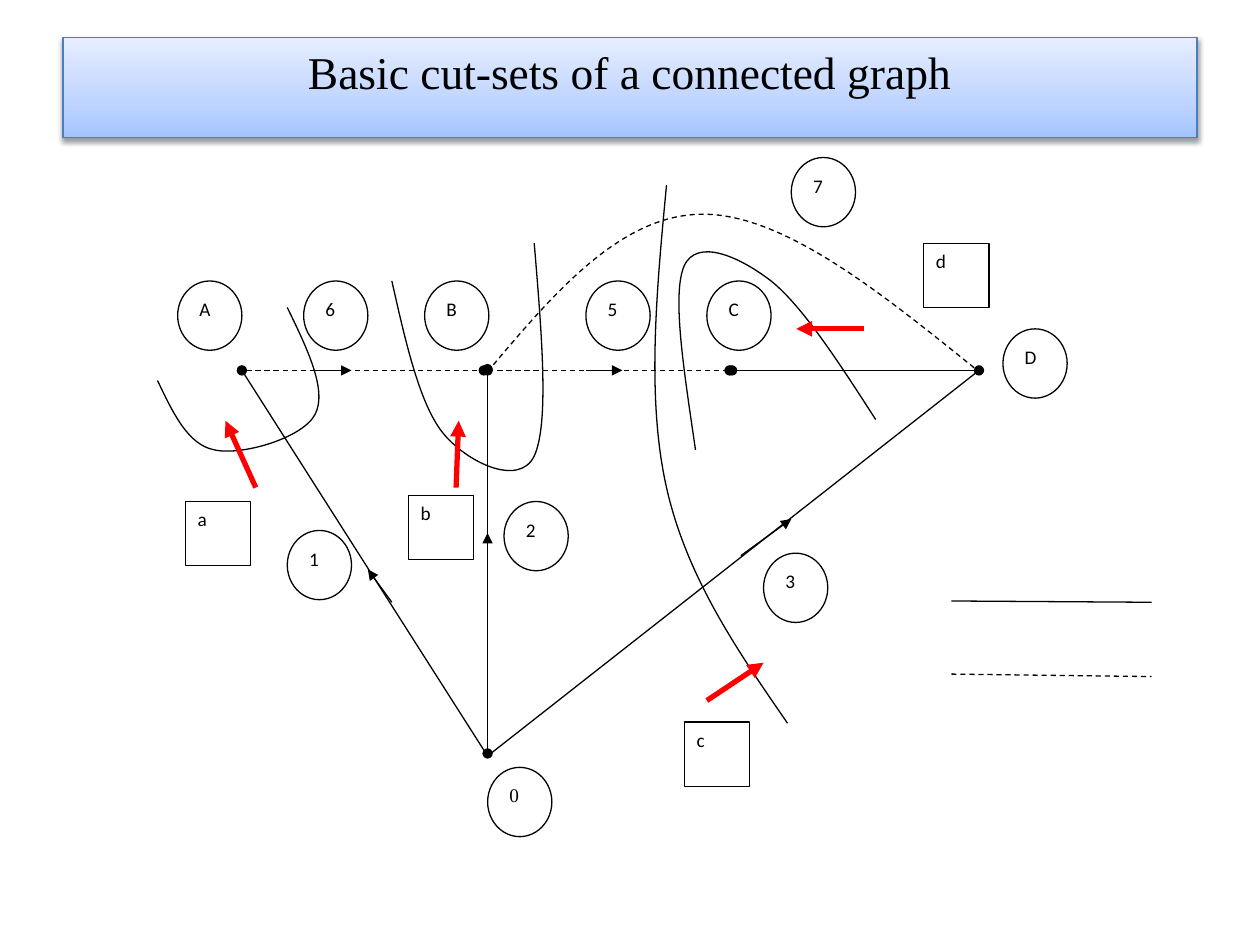
from dataclasses import dataclass
from typing import Optional

from lxml.etree import SubElement
from pptx import Presentation
from pptx.dml.color import RGBColor as Rgb
from pptx.enum.dml import MSO_LINE as Dash
from pptx.enum.shapes import MSO_CONNECTOR as Connector, MSO_SHAPE as Preset
from pptx.enum.text import MSO_ANCHOR as Anchor, MSO_AUTO_SIZE as AutoSize, PP_ALIGN as Align
from pptx.oxml import parse_xml
from pptx.oxml.ns import nsdecls, qn
from pptx.util import Inches, Pt

Point = tuple[float, float]


@dataclass(frozen=True)
class Theme:
    ink: str = "000000"
    paper: str = "FFFFFF"
    pointer: str = "FF0000"
    banner_line: str = "4B7EBC"
    banner_stops: tuple = ((0, "A4C4FF"), (35, "BFD4FF"), (100, "E6EEFF"))
    body_font: str = "Calibri"
    title_font: str = "Times New Roman"
    label_size: float = 11
    title_size: float = 26
    thin: float = 0.75
    thick: float = 3


THEME = Theme()


@dataclass(frozen=True)
class Label:
    text: str
    left: float
    top: float
    font: str = THEME.body_font


@dataclass(frozen=True)
class Edge:
    start: Point
    end: Point
    dashed: bool = False
    head: Optional[str] = None
    tail: Optional[str] = None
    color: str = THEME.ink
    width: float = THEME.thin


@dataclass(frozen=True)
class Curve:
    """Anchor and control points of joined cubic segments."""
    points: tuple[Point, ...]
    dashed: bool = False


# Circles name the vertices and branches, squares name the cut-sets
CIRCLE_SIZE, SQUARE_SIZE = (0.51, 0.55), (0.52, 0.51)
CIRCLES = [
    Label("7", 6.28, 1.25), Label("A", 1.41, 2.23), Label("5", 4.65, 2.23),
    Label("D", 7.96, 2.61), Label("3", 6.06, 4.39), Label("2", 4, 3.98),
    Label("B", 3.37, 2.23), Label("6", 2.41, 2.23), Label("1", 2.28, 4.21),
    Label("0", 3.87, 6.09, THEME.title_font), Label("C", 5.61, 2.23),
]
SQUARES = [Label("d", 7.33, 1.93), Label("c", 5.43, 5.73),
           Label("a", 1.47, 3.98), Label("b", 3.24, 3.93)]

# Vertices of the graph
A, B, D, ORIGIN = (1.92, 2.94), (3.87, 2.94), (7.77, 2.94), (3.87, 6)
DOTS = {"head": "oval", "tail": "oval"}
TRUNK = Edge((3.87, 2.93), (3.87, 5.98), **DOTS)
ROW = [
    Edge(A, B, dashed=True, **DOTS),
    Edge((3.84, 2.94), (5.79, 2.94), dashed=True, **DOTS),
    Edge((5.81, 2.94), D, **DOTS),
]
SIDES = [Edge(ORIGIN, D), Edge(A, ORIGIN)]
DIRECTIONS = [Edge(start, end, tail="triangle") for start, end in (
    ((5.88, 4.41), (6.28, 4.12)), ((3.11, 4.78), (2.92, 4.52)),
    ((3.87, 4.55), (3.87, 4.23)), ((2.5, 2.94), (2.79, 2.94)),
    ((4.65, 2.94), (4.94, 2.94)))]
LEGEND = [Edge((7.55, 4.77), (9.14, 4.78)),
          Edge((7.55, 5.35), (9.14, 5.37), dashed=True)]
POINTERS = [Edge(start, end, tail="triangle", color=THEME.pointer, width=THEME.thick)
            for start, end in (
                ((2.03, 3.87), (1.79, 3.34)), ((3.62, 3.87), (3.64, 3.34)),
                ((6.86, 2.61), (6.32, 2.61)), ((5.61, 5.56), (6.06, 5.26)))]

# Branch 7, then the lines of cut-sets a, b, c and d
BRANCH_ARC = Curve(((3.87, 2.95), (4.4, 2.32), (4.93, 1.7), (5.58, 1.7),
                    (6.22, 1.7), (6.99, 2.32), (7.77, 2.95)), dashed=True)
CUTS = [
    Curve(((1.25, 3.02), (1.37, 3.27), (1.49, 3.53), (1.7, 3.57), (1.91, 3.62),
           (2.4, 3.48), (2.5, 3.29), (2.6, 3.1), (2.44, 2.77), (2.28, 2.44))),
    Curve(((3.11, 2.23), (3.22, 2.72), (3.33, 3.2), (3.51, 3.43), (3.7, 3.67),
           (4.12, 3.87), (4.24, 3.62), (4.36, 3.36), (4.3, 2.65), (4.24, 1.93))),
    Curve(((5.29, 1.47), (5.21, 2.31), (5.13, 3.16), (5.29, 3.87),
           (5.45, 4.58), (5.85, 5.16), (6.25, 5.74))),
    Curve(((5.52, 3.57), (5.43, 2.95), (5.33, 2.34), (5.43, 2.11), (5.53, 1.89),
           (5.86, 2.03), (6.12, 2.23), (6.37, 2.43), (6.66, 2.88), (6.95, 3.33))),
]


def apply_format(target, values: dict) -> None:
    for name, value in values.items():
        setattr(target, name, value)


def style_line(line, color: str, width: float, dashed: bool = False) -> None:
    line.color.rgb = Rgb.from_string(color)
    line.width = Pt(width)
    if dashed:
        line.dash_style = Dash.DASH


def write_text(para, text: str, font: str, size: float) -> None:
    span = para.add_run()
    span.text = text
    apply_format(span.font, {"name": font, "size": Pt(size)})
    span.font.color.rgb = Rgb.from_string(THEME.ink)


def draw_label(page, label: Label, preset: Preset, size: Point) -> None:
    box = page.shapes.add_shape(preset, *map(Inches, (label.left, label.top, *size)))
    box.shadow.inherit = False
    box.fill.solid()
    box.fill.fore_color.rgb = Rgb.from_string(THEME.paper)
    style_line(box.line, THEME.ink, THEME.thin)
    box.text_frame.vertical_anchor = Anchor.TOP
    para = box.text_frame.paragraphs[0]
    apply_format(para, {"alignment": Align.LEFT, "space_after": Pt(10)})
    write_text(para, label.text, label.font, THEME.label_size)


def draw_edge(page, edge: Edge) -> None:
    wire = page.shapes.add_connector(Connector.STRAIGHT, *map(Inches, edge.start + edge.end))
    style_line(wire.line, edge.color, edge.width, edge.dashed)
    outline = wire.line._get_or_add_ln()
    for tag, kind in (("a:headEnd", edge.head), ("a:tailEnd", edge.tail)):
        if kind:
            SubElement(outline, qn(tag), type=kind)
    SubElement(wire._element.spPr, qn("a:effectLst"))


def draw_curve(page, curve: Curve) -> None:
    start, *rest = [tuple(map(Inches, point)) for point in curve.points]
    builder = page.shapes.build_freeform(*start)
    builder.add_line_segments(rest, close=False)
    arc = builder.convert_to_shape()
    # Every three straight steps become one cubic segment
    steps = list(arc._element.iter(qn("a:lnTo")))
    route = steps[0].getparent()
    for first in range(0, len(steps), 3):
        bend = SubElement(route, qn("a:cubicBezTo"))
        for step in steps[first:first + 3]:
            bend.append(step[0])
            route.remove(step)
    arc.shadow.inherit = False
    arc.fill.background()
    style_line(arc.line, THEME.ink, THEME.thin, curve.dashed)


def draw_title(page, text: str) -> None:
    title = page.shapes.title
    apply_format(title, {"left": Inches(0.5), "top": Inches(0.3),
                         "width": Inches(9), "height": Inches(0.79)})
    apply_format(title.text_frame, {"auto_size": AutoSize.NONE, "word_wrap": True,
                                    "vertical_anchor": Anchor.TOP,
                                    "margin_top": Inches(0.05)})
    para = title.text_frame.paragraphs[0]
    para.alignment = Align.CENTER
    write_text(para, text, THEME.title_font, THEME.title_size)
    # Three-stop gradient and soft shadow
    stops = "".join(f'<a:gs pos="{place * 1000}"><a:srgbClr val="{color}"/></a:gs>'
                    for place, color in THEME.banner_stops)
    properties = title._element.spPr
    properties.append(parse_xml(
        f'<a:gradFill {nsdecls("a")} rotWithShape="1"><a:gsLst>{stops}</a:gsLst>'
        '<a:lin ang="16200000" scaled="0"/></a:gradFill>'))
    style_line(title.line, THEME.banner_line, THEME.thin)
    properties.append(parse_xml(
        f'<a:effectLst {nsdecls("a")}><a:outerShdw blurRad="{Pt(3.1)}" dist="{Pt(1.6)}" '
        f'dir="5400000" rotWithShape="0"><a:srgbClr val="{THEME.ink}">'
        '<a:alpha val="38000"/></a:srgbClr></a:outerShdw></a:effectLst>'))


def main() -> None:
    deck = Presentation()
    apply_format(deck, {"slide_width": Inches(10), "slide_height": Inches(7.5)})
    page = deck.slides.add_slide(deck.slide_layouts[5])
    draw_title(page, "Basic cut-sets of a connected graph")
    # Graph
    draw_edge(page, TRUNK)
    for label in CIRCLES:
        draw_label(page, label, Preset.OVAL, CIRCLE_SIZE)
    for edge in ROW:
        draw_edge(page, edge)
    draw_curve(page, BRANCH_ARC)
    for edge in SIDES + DIRECTIONS + LEGEND:
        draw_edge(page, edge)
    # Cut-sets
    for cut in CUTS:
        draw_curve(page, cut)
    for edge in POINTERS:
        draw_edge(page, edge)
    for label in SQUARES:
        draw_label(page, label, Preset.RECTANGLE, SQUARE_SIZE)
    deck.save("out.pptx")


if __name__ == "__main__":
    main()
